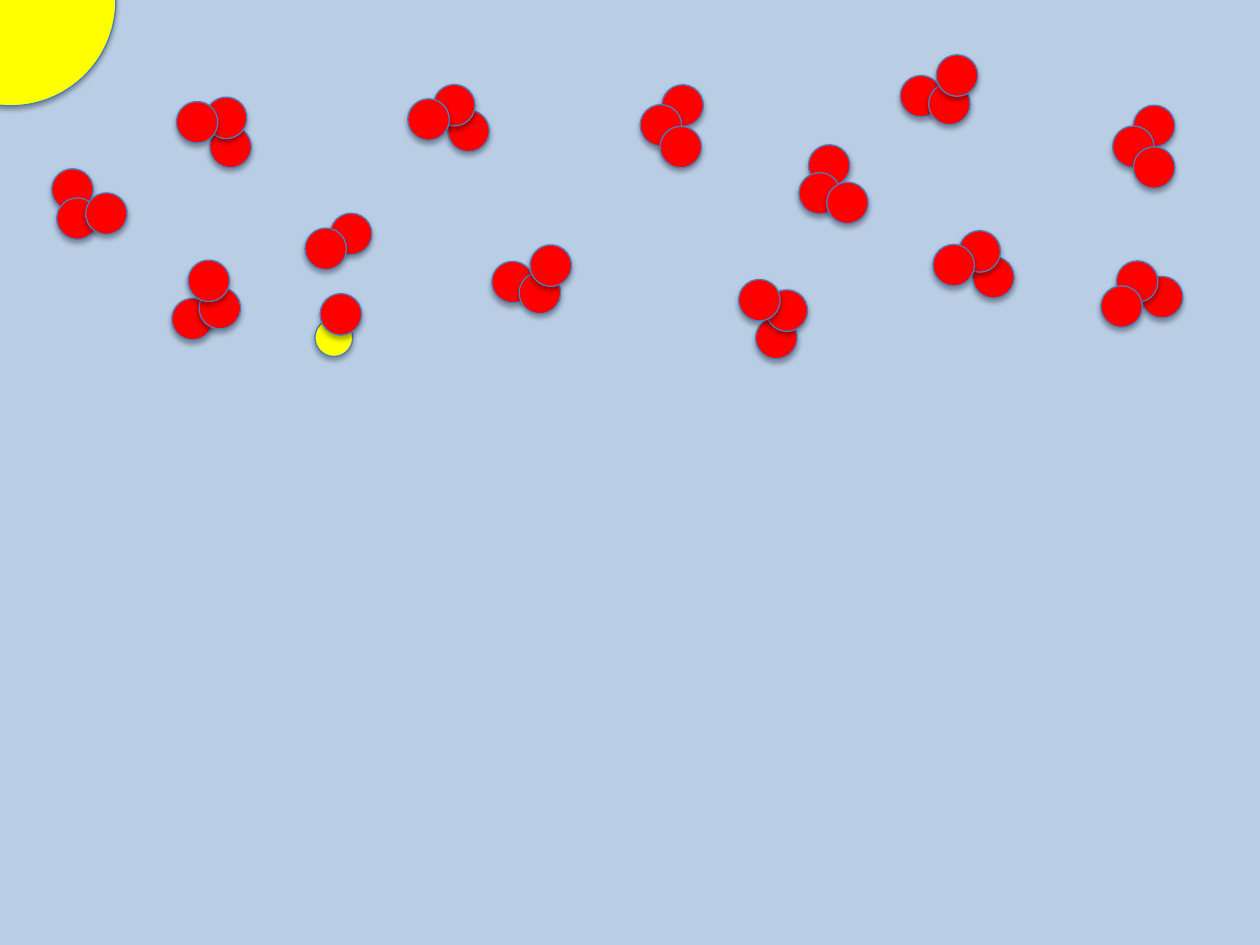
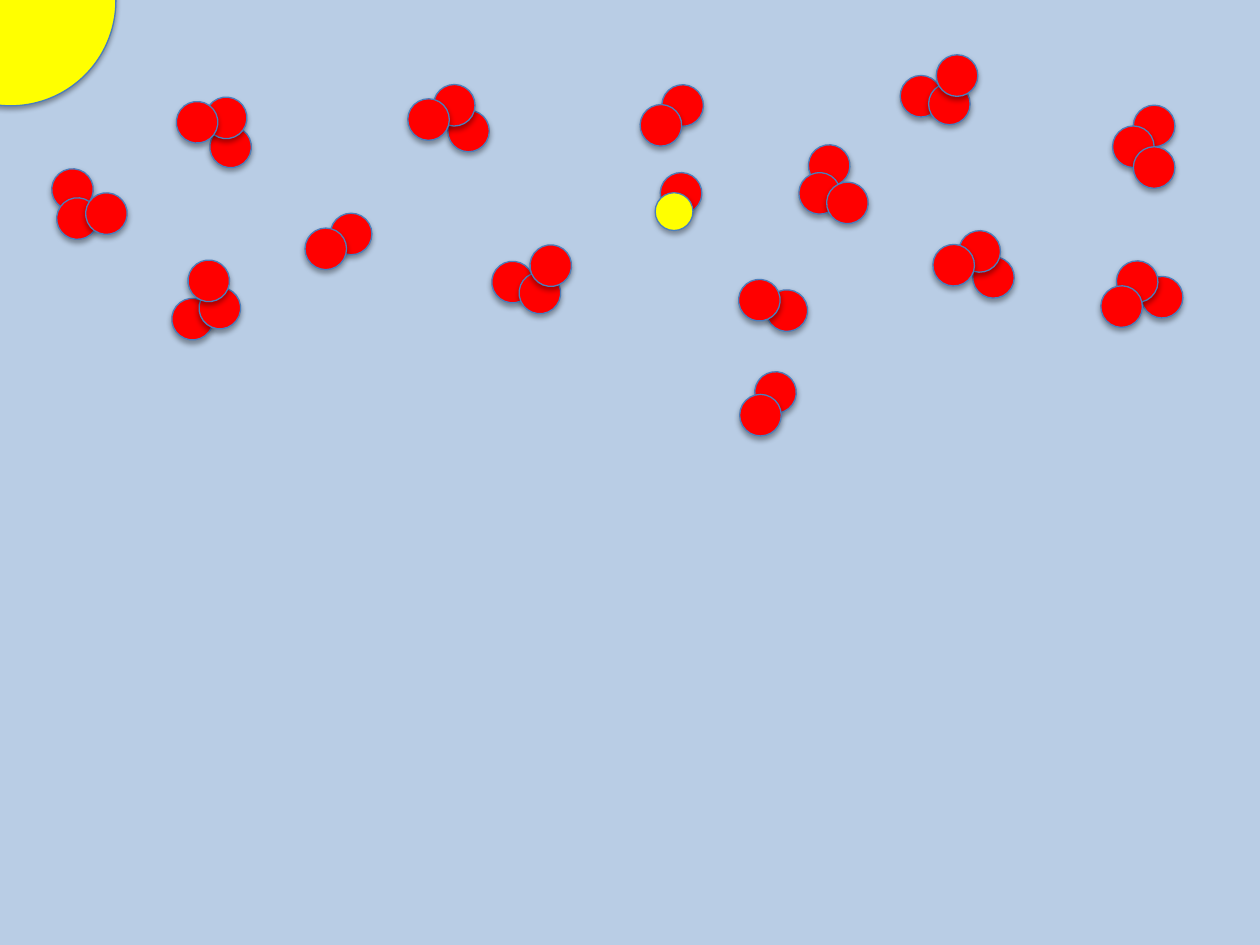
import math
import typing

import lxml.etree
import pptx
import pptx.dml.color
import pptx.enum.shapes
import pptx.oxml.ns
import pptx.util

Inches = pptx.util.Inches

SKY, RED, YELLOW, EDGE = "B9CDE5", "FF0000", "FFFF00", "4B7EBC"
ATOM, CHLORINE, SUN = 0.33, 0.3, 1.67
STEP = ATOM / 2


class Ball(typing.NamedTuple):
    x: float
    y: float
    turn: float = 0
    size: float = ATOM
    tint: str = RED


class Ozone(typing.NamedTuple):
    """A bent molecule, placed by its middle atom; sides are the atoms it still has."""
    x: float
    y: float
    turn: float
    sides: tuple[int, ...] = (-1, 0, 1)

    def balls(self) -> list[Ball]:
        angle = math.radians(self.turn)
        cos, sin = math.cos(angle), math.sin(angle)
        result = []
        for side in self.sides:
            dx, dy = side * STEP, -abs(side) * STEP
            result.append(Ball(self.x + dx * cos - dy * sin,
                               self.y + dx * sin + dy * cos, self.turn))
        return result


class Scene(typing.NamedTuple):
    ozone: list[Ozone]
    bound: list[Ball]
    loose: list[Ball]


WHOLE = [
    Ozone(7.61, 1.83, 197), Ozone(7.37, 0.66, 330.2), Ozone(0.45, 1.57, 35.3),
    Ozone(3.44, 0.67, 195.9), Ozone(6.34, 1.37, 63.9), Ozone(1.58, 2.28, 292.9),
    Ozone(8.86, 2.07, 167), Ozone(4.12, 2.16, 336.7), Ozone(1.63, 0.77, 216.4),
    Ozone(8.83, 1, 90),
]
LEFT = Ozone(2.42, 1.81, 104.7, (-1, 0))
UPPER = (5.08, 0.83, 92.6)
LOWER = (6.08, 2.3, 245.8)

SCENES = [
    Scene([*WHOLE, Ozone(*LOWER), Ozone(*UPPER), LEFT],
          [Ball(2.5, 2.53, 0, CHLORINE, YELLOW), Ball(2.54, 2.33, 104.7)], []),
    Scene([*WHOLE, Ozone(*LOWER, (0, 1)), Ozone(*UPPER, (-1, 0)), LEFT],
          [Ball(5.24, 1.37, 92.6), Ball(5.2, 1.53, 0, CHLORINE, YELLOW)],
          [Ball(5.99, 2.95, 245.8), Ball(5.87, 3.13, 104.7)]),
]


def color(code: str) -> pptx.dml.color.RGBColor:
    return pptx.dml.color.RGBColor.from_string(code)


def add_shadow(shape) -> None:
    """Cast a soft shadow straight down, whatever the turn of the shape."""
    shape.shadow.inherit = False
    qn = pptx.oxml.ns.qn
    effects = shape._element.spPr.find(qn("a:effectLst"))
    outer = lxml.etree.SubElement(
        effects, qn("a:outerShdw"), blurRad=str(pptx.util.Pt(3.1)),
        dist=str(pptx.util.Pt(1.8)), dir="5400000", rotWithShape="0")
    tint = lxml.etree.SubElement(outer, qn("a:srgbClr"), val="000000")
    lxml.etree.SubElement(tint, qn("a:alpha"), val="35000")


def draw_balls(shapes, balls: list[Ball]) -> None:
    for ball in balls:
        shape = shapes.add_shape(
            pptx.enum.shapes.MSO_SHAPE.OVAL, Inches(ball.x), Inches(ball.y),
            Inches(ball.size), Inches(ball.size))
        shape.rotation = ball.turn
        shape.fill.solid()
        shape.fill.fore_color.rgb = color(ball.tint)
        shape.line.color.rgb = color(EDGE)
        shape.line.width = pptx.util.Pt(0.75)
        add_shadow(shape)


def draw_scene(deck, scene: Scene) -> None:
    slide = deck.slides.add_slide(deck.slide_layouts[6])
    slide.background.fill.solid()
    slide.background.fill.fore_color.rgb = color(SKY)
    shapes = slide.shapes
    draw_balls(shapes, [Ball(-0.75, -0.83, 0, SUN, YELLOW)])
    for ozone in scene.ozone:
        intact = len(ozone.sides) == 3
        draw_balls(shapes.add_group_shape().shapes if intact else shapes, ozone.balls())
    draw_balls(shapes.add_group_shape().shapes, scene.bound)
    draw_balls(shapes, scene.loose)


def main() -> None:
    deck = pptx.Presentation()
    deck.slide_width, deck.slide_height = Inches(10), Inches(7.5)
    for scene in SCENES:
        draw_scene(deck, scene)
    deck.save("out.pptx")


if __name__ == "__main__":
    main()
